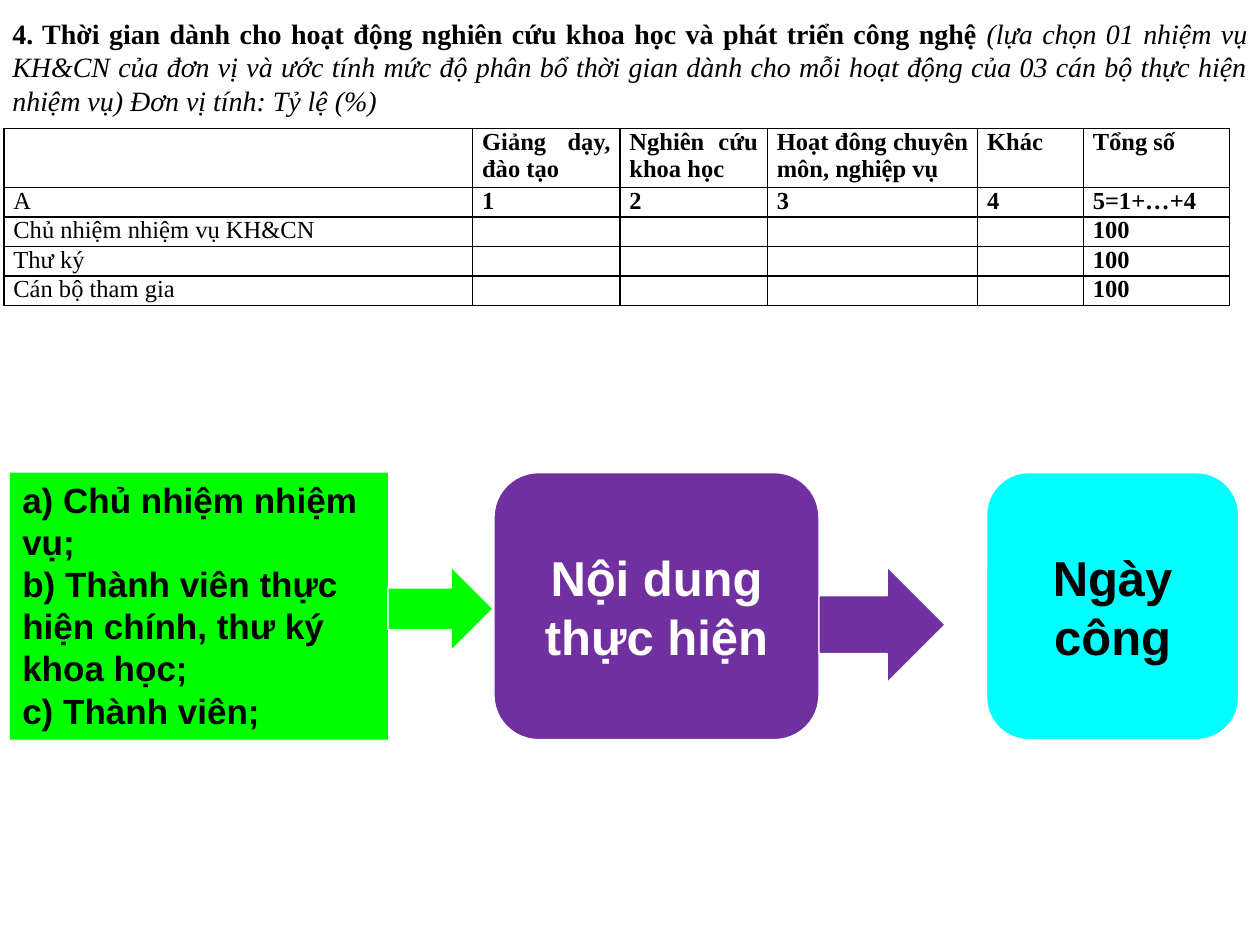
import pptx
import pptx.dml.color
import pptx.enum.shapes
import pptx.enum.text
import pptx.oxml.ns
import pptx.util
from lxml import etree
from pptx.util import Cm, Pt

COLORS = {
    "black": "000000",
    "white": "FFFFFF",
    "green": "00FF00",
    "purple": "7030A0",
    "cyan": "00FFFF",
}
SERIF, SANS = "Times New Roman", "Arial"
ALIGN = pptx.enum.text.PP_ALIGN
ANCHOR = pptx.enum.text.MSO_ANCHOR
SHAPE = pptx.enum.shapes.MSO_SHAPE

COLUMN_WIDTHS = [9.45, 2.97, 2.97, 4.24, 2.13, 2.95]
HEADER_HEIGHT, ROW_HEIGHT = 1.19, 0.59
TIME_SHARES = [
    ["", "Giảng dạy, đào tạo", "Nghiên cứu khoa học",
     "Hoạt đông chuyên môn, nghiệp vụ", "Khác", "Tổng số"],
    ["A", "1", "2", "3", "4", "5=1+…+4"],
    ["Chủ nhiệm nhiệm vụ KH&CN", "", "", "", "", "100"],
    ["Thư ký", "", "", "", "", "100"],
    ["Cán bộ tham gia", "", "", "", "", "100"],
]
FLOW_TOP, FLOW_HEIGHT = 9.53, 5.38
ARROW_TOP = 11.43


def rgb(name):
    return pptx.dml.color.RGBColor.from_string(COLORS[name])


def add_run(paragraph, text, font, size, color="black", bold=False, italic=False):
    run = paragraph.add_run()
    run.text = text
    run.font.name = font
    run.font.size = Pt(size)
    run.font.bold = bold
    run.font.italic = italic
    run.font.color.rgb = rgb(color)


def add_heading(slide):
    heading = slide.shapes.add_textbox(Cm(0), Cm(0.2), Cm(25.4), Cm(2.31))
    heading.text_frame.word_wrap = True
    paragraph = heading.text_frame.paragraphs[0]
    paragraph.alignment = ALIGN.JUSTIFY
    paragraph.space_before = Pt(6)
    add_run(paragraph, "4. Thời gian dành cho hoạt động nghiên cứu khoa học "
            "và phát triển công nghệ ", SERIF, 16, bold=True)
    add_run(paragraph, "(lựa chọn 01 nhiệm vụ KH&CN của đơn vị và ước tính mức độ "
            "phân bổ thời gian dành cho mỗi hoạt động của 03 cán bộ thực hiện "
            "nhiệm vụ) Đơn vị tính: Tỷ lệ (%)", SERIF, 16, italic=True)


def set_borders(cell):
    qn = pptx.oxml.ns.qn
    properties = cell._tc.get_or_add_tcPr()
    for side in ("a:lnL", "a:lnR", "a:lnT", "a:lnB"):
        border = etree.SubElement(properties, qn(side), w=str(Pt(1)))
        fill = etree.SubElement(border, qn("a:solidFill"))
        etree.SubElement(fill, qn("a:srgbClr"), val=COLORS["black"])


def fill_cell(cell, text, bold):
    cell.margin_left = cell.margin_right = Cm(0.19)
    cell.margin_top = cell.margin_bottom = Cm(0)
    set_borders(cell)
    cell.fill.background()
    paragraph = cell.text_frame.paragraphs[0]
    paragraph.alignment = ALIGN.JUSTIFY
    paragraph.space_before = paragraph.space_after = Pt(2)
    if text:
        add_run(paragraph, text, SERIF, 14, bold=bold)
    else:
        # An empty cell takes its height from the end-of-paragraph size.
        etree.SubElement(paragraph._p, pptx.oxml.ns.qn("a:endParaRPr"), sz="1400")


def add_time_table(slide):
    heights = [HEADER_HEIGHT] + [ROW_HEIGHT] * (len(TIME_SHARES) - 1)
    table = slide.shapes.add_table(
        len(heights), len(COLUMN_WIDTHS), Cm(0.08), Cm(2.59),
        Cm(sum(COLUMN_WIDTHS)), Cm(sum(heights))).table
    table.first_row = table.horz_banding = False
    for column, width in zip(table.columns, COLUMN_WIDTHS):
        column.width = Cm(width)
    for row, height, texts in zip(table.rows, heights, TIME_SHARES):
        row.height = Cm(height)
        for index, (cell, text) in enumerate(zip(row.cells, texts)):
            fill_cell(cell, text, bold=index > 0)


def add_block(slide, kind, left, top, width, height, color, outlined=True):
    block = slide.shapes.add_shape(kind, Cm(left), Cm(top), Cm(width), Cm(height))
    block.shadow.inherit = False
    block.fill.solid()
    block.fill.fore_color.rgb = rgb(color)
    if outlined:
        block.line.color.rgb = rgb("white")
        block.line.width = Pt(0.75)
    else:
        block.line.fill.background()
    return block


def write_block(block, lines, size, color, alignment, anchor):
    frame = block.text_frame
    frame.word_wrap = True
    frame.vertical_anchor = anchor
    for index, line in enumerate(lines):
        paragraph = frame.add_paragraph() if index else frame.paragraphs[0]
        paragraph.alignment = alignment
        add_run(paragraph, line, SANS, size, color, bold=True)


def add_flow(slide):
    """Members lead to the work content, which leads to the working days."""
    members = add_block(slide, SHAPE.RECTANGLE, 0.2, FLOW_TOP, 7.62, FLOW_HEIGHT,
                        "green", outlined=False)
    write_block(members, ["a) Chủ nhiệm nhiệm vụ;",
                          "b) Thành viên thực hiện chính, thư ký khoa học;",
                          "c) Thành viên;"], 20, "black", ALIGN.LEFT, ANCHOR.TOP)
    for text, left, width, fill, color in (
            ("Nội dung thực hiện", 9.96, 6.55, "purple", "white"),
            ("Ngày công", 19.89, 5.08, "cyan", "black")):
        step = add_block(slide, SHAPE.ROUNDED_RECTANGLE, left, FLOW_TOP, width,
                         FLOW_HEIGHT, fill)
        write_block(step, [text], 28, color, ALIGN.CENTER, ANCHOR.MIDDLE)
    add_block(slide, SHAPE.RIGHT_ARROW, 7.82, ARROW_TOP, 2.12, 1.69, "green")
    add_block(slide, SHAPE.RIGHT_ARROW, 16.51, ARROW_TOP, 2.54, 2.33, "purple")


def main():
    presentation = pptx.Presentation()
    presentation.slide_width, presentation.slide_height = Cm(25.4), Cm(19.05)
    slide = presentation.slides.add_slide(presentation.slide_layouts[6])
    add_heading(slide)
    add_time_table(slide)
    add_flow(slide)
    presentation.save("out.pptx")


if __name__ == "__main__":
    main()
